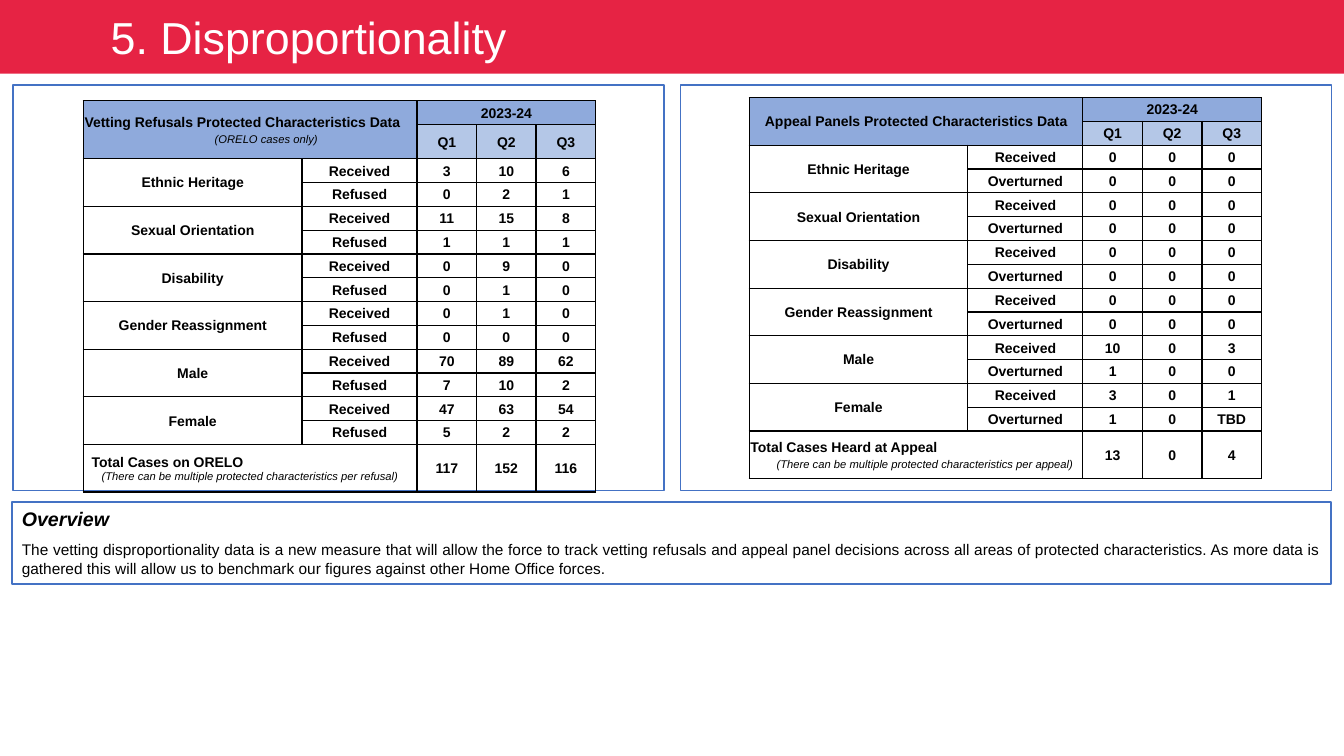
from lxml.etree import SubElement
from pptx import Presentation
from pptx.dml.color import RGBColor
from pptx.enum.shapes import MSO_SHAPE
from pptx.enum.text import MSO_ANCHOR as Anchor, PP_ALIGN as Align
from pptx.oxml.ns import qn
from pptx.util import Cm, Pt

TITLE = "5. Disproportionality"
OVERVIEW = [
    ("Overview", dict(size=Pt(14), bold=True, italic=True), dict()),
    ("The vetting disproportionality data is a new measure that will allow the force to track "
     "vetting refusals and appeal panel decisions across all areas of protected characteristics. "
     "As more data is gathered this will allow us to benchmark our figures against other Home "
     "Office forces.", dict(size=Pt(11)), dict(space_before=Pt(7))),
]
YEAR = "2023-24"
QUARTERS = ["Q1", "Q2", "Q3"]
CHARACTERISTICS = ["Ethnic Heritage", "Sexual Orientation", "Disability",
                   "Gender Reassignment", "Male", "Female"]

STRONG = dict(size=Pt(10), bold=True)
NOTE = dict(size=Pt(8), italic=True)

REFUSALS = dict(
    left=2.1, top=2.54, quarter_height=0.86, outcomes=["Received", "Refused"],
    heading=[("Vetting Refusals Protected Characteristics Data", STRONG, 0, 0),
             ("(ORELO cases only)", NOTE, 3.28, 2)],
    counts=[(3, 10, 6), (0, 2, 1), (11, 15, 8), (1, 1, 1), (0, 9, 0), (0, 1, 0),
            (0, 1, 0), (0, 0, 0), (70, 89, 62), (7, 10, 2), (47, 63, 54), (5, 2, 2)],
    total=[("Total Cases on ORELO", STRONG, 0.18, 0),
           ("(There can be multiple protected characteristics per refusal)", NOTE, 0.43, 0)],
    total_counts=(117, 152, 116),
)
APPEALS = dict(
    left=18.88, top=2.46, quarter_height=0.6, outcomes=["Received", "Overturned"],
    heading=[("Appeal Panels Protected Characteristics Data", STRONG, None, 0)],
    counts=[(0, 0, 0)] * 8 + [(10, 0, 3), (1, 0, 0), (3, 0, 1), (1, 0, "TBD")],
    total=[("Total Cases Heard at Appeal", STRONG, 0, 0),
           ("(There can be multiple protected characteristics per appeal)", NOTE, 0.66, 2)],
    total_counts=(13, 0, 4),
)

COLUMNS = [5.51, 2.9, 1.5, 1.5, 1.5]
ROW, TOTAL_ROW = 0.6, 1.2
RED, BLUE, HEAD, SUBHEAD = "E62344", "4472C4", "8FAADC", "B4C7E7"
BLACK, WHITE = "000000", "FFFFFF"


def colour(hex_value):
    return RGBColor.from_string(hex_value)


def apply(target, values):
    for name, value in values.items():
        setattr(target, name, value)


def write(paragraph, text, font, ink=BLACK, **layout):
    run = paragraph.add_run()
    run.text = str(text)
    apply(run.font, dict(name="Arial", bold=False, italic=False) | font)
    run.font.color.rgb = colour(ink)
    apply(paragraph, layout)


def add_paragraph(frame, index):
    return frame.add_paragraph() if index else frame.paragraphs[0]


def add_box(slide, left, top, width, height, fill=None, line=None):
    box = slide.shapes.add_shape(MSO_SHAPE.RECTANGLE, Cm(left), Cm(top), Cm(width), Cm(height))
    box.shadow.inherit = False
    if fill:
        box.fill.solid()
        box.fill.fore_color.rgb = colour(fill)
    else:
        box.fill.background()
    if line:
        box.line.color.rgb = colour(line)
        box.line.width = Pt(1.25)
    else:
        box.line.fill.background()
    return box


def style_cell(cell, fill=None):
    properties = cell._tc.get_or_add_tcPr()
    for side in ("lnL", "lnR", "lnT", "lnB"):
        border = SubElement(properties, qn(f"a:{side}"), w=str(Pt(1)))
        SubElement(SubElement(border, qn("a:solidFill")), qn("a:srgbClr"), val=BLACK)
    if fill:
        cell.fill.solid()
        cell.fill.fore_color.rgb = colour(fill)
    else:
        cell.fill.background()
    apply(cell, dict(vertical_anchor=Anchor.MIDDLE, margin_left=Cm(0.03), margin_right=Cm(0.03),
                     margin_top=Cm(0.03), margin_bottom=0))


def fill_lines(cell, lines):
    for index, (text, font, indent, gap) in enumerate(lines):
        paragraph = add_paragraph(cell.text_frame, index)
        align = Align.CENTER if indent is None else Align.LEFT
        write(paragraph, text, font, alignment=align, space_before=Pt(gap))
        if indent:
            paragraph._p.get_or_add_pPr().set("marL", str(Cm(indent)))


def add_data_table(slide, data):
    heights = [ROW, data["quarter_height"]] + [ROW] * len(data["counts"]) + [TOTAL_ROW]
    last = len(heights) - 1
    table = slide.shapes.add_table(len(heights), len(COLUMNS), Cm(data["left"]), Cm(data["top"]),
                                   Cm(sum(COLUMNS)), Cm(sum(heights))).table
    apply(table, dict(first_row=False, horz_banding=False))
    for column, width in zip(table.columns, COLUMNS):
        column.width = Cm(width)
    for row, height in zip(table.rows, heights):
        row.height = Cm(height)

    for r in range(len(heights)):
        for c in range(len(COLUMNS)):
            head = SUBHEAD if r == 1 and c > 1 else HEAD
            style_cell(table.cell(r, c), head if r < 2 else None)

    texts = {(0, 0): data["heading"], (last, 0): data["total"]}
    plain = {(0, 2): YEAR}
    for r, values in enumerate([QUARTERS, *data["counts"], data["total_counts"]], 1):
        plain |= {(r, c): value for c, value in enumerate(values, 2)}
    spans = [((0, 0), (1, 1)), ((0, 2), (0, 4)), ((last, 0), (last, 1))]
    for i, characteristic in enumerate(CHARACTERISTICS):
        first = 2 + 2 * i
        plain[first, 0] = characteristic
        spans.append(((first, 0), (first + 1, 0)))
        for k, outcome in enumerate(data["outcomes"]):
            plain[first + k, 1] = outcome
    texts |= {place: [(text, STRONG, None, 0)] for place, text in plain.items()}

    for start, end in spans:
        table.cell(*start).merge(table.cell(*end))
    for place, lines in texts.items():
        fill_lines(table.cell(*place), lines)


def main():
    deck = Presentation()
    apply(deck, dict(slide_width=Cm(33.87), slide_height=Cm(19.05)))
    slide = deck.slides.add_slide(deck.slide_layouts[6])

    for left in (0.33, 17.15):
        add_box(slide, left, 2.15, 16.41, 10.21, line=BLUE)

    overview = add_box(slide, 0.3, 12.65, 33.25, 2.06, line=BLUE).text_frame
    apply(overview, dict(word_wrap=True, vertical_anchor=Anchor.TOP))
    for index, (text, font, layout) in enumerate(OVERVIEW):
        write(add_paragraph(overview, index), text, font, alignment=Align.JUSTIFY, **layout)

    banner = add_box(slide, 0, 0, 33.87, 1.86, fill=RED).text_frame
    apply(banner, dict(word_wrap=True, vertical_anchor=Anchor.MIDDLE, margin_left=Cm(2.79)))
    write(banner.paragraphs[0], TITLE, dict(size=Pt(32)), WHITE, alignment=Align.LEFT)

    for data in (REFUSALS, APPEALS):
        add_data_table(slide, data)
    deck.save("out.pptx")


if __name__ == "__main__":
    main()
